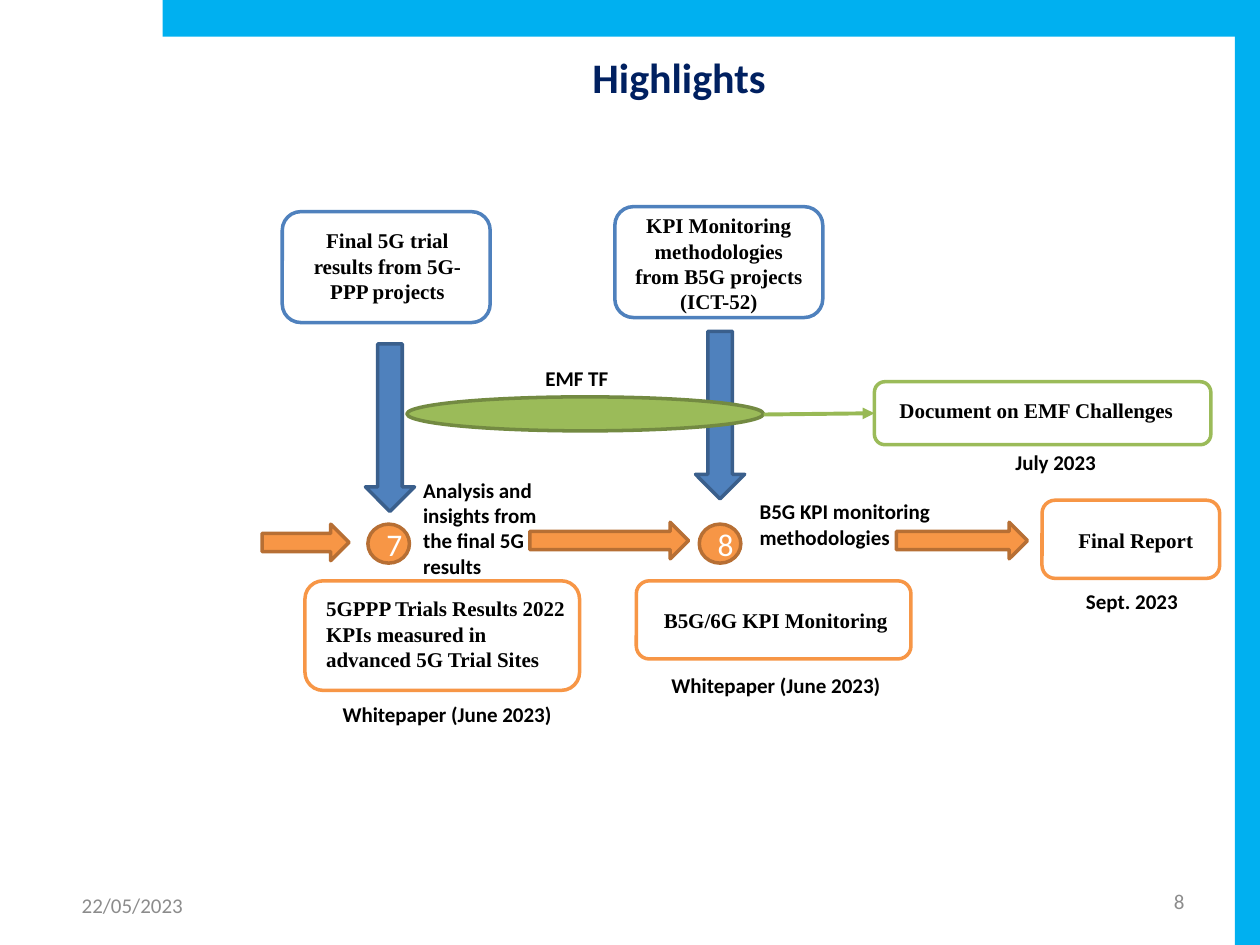
from lxml import etree
from pptx import Presentation
from pptx.dml.color import RGBColor
from pptx.enum.shapes import MSO_CONNECTOR, MSO_SHAPE
from pptx.enum.text import MSO_ANCHOR, PP_ALIGN
from pptx.oxml.ns import qn
from pptx.util import Pt

PX = 9144
RECT, ROUND, OVAL, ARROW = (MSO_SHAPE.RECTANGLE, MSO_SHAPE.ROUNDED_RECTANGLE,
                            MSO_SHAPE.OVAL, MSO_SHAPE.DOWN_ARROW)
LEFT, CENTER, RIGHT = PP_ALIGN.LEFT, PP_ALIGN.CENTER, PP_ALIGN.RIGHT
TOP, MIDDLE = MSO_ANCHOR.TOP, MSO_ANCHOR.MIDDLE
STRAIGHT = MSO_CONNECTOR.STRAIGHT
SANS, SERIF = "Calibri", "Times New Roman"
COLORS = {
    "band": "00B0F0", "title": "002060", "footer": "8C8C8C",
    "black": "000000", "white": "FFFFFF",
    "orange": "F79646", "orange_edge": "B76F34",
    "blue": "4F81BD", "blue_edge": "3A5F8C",
    "green": "9BBB59", "green_edge": "738A42", "link": "98B955",
}


def color(name):
    """Look up a named colour."""
    return RGBColor.from_string(COLORS[name])


def scaled(*lengths):
    """Turn px into EMU."""
    return [length * PX for length in lengths]


def write(frame, text, font=SANS, size=12, ink="black", bold=True, align=LEFT):
    """Write one run into the first paragraph of a frame."""
    paragraph = frame.paragraphs[0]
    paragraph.alignment = align
    run = paragraph.add_run()
    run.text = text
    run.font.name, run.font.size, run.font.bold = font, Pt(size), bold
    run.font.color.rgb = color(ink)


def add_label(slide, bounds, text, wrap=True, anchor=TOP, **style):
    """Add a text box."""
    frame = slide.shapes.add_textbox(*scaled(*bounds)).text_frame
    frame.word_wrap = wrap
    frame.vertical_anchor = anchor
    write(frame, text, **style)


def add_figure(slide, kind, bounds, fill, edge=None):
    """Add a filled preset shape, outlined if an edge colour is given."""
    figure = slide.shapes.add_shape(kind, *scaled(*bounds))
    figure.shadow.inherit = False
    figure.fill.solid()
    figure.fill.fore_color.rgb = color(fill)
    if edge:
        figure.line.color.rgb = color(edge)
        figure.line.width = Pt(2)
    else:
        figure.line.fill.background()
    return figure


def add_card(slide, bounds, edge, text_bounds, text, align=LEFT):
    """Add a rounded outline with its serif caption."""
    add_figure(slide, ROUND, bounds, "white", edge)
    add_label(slide, text_bounds, text, font=SERIF, align=align)


def add_step_arrow(slide, left, top, length):
    """Add an orange arrow pointing right along the timeline."""
    thickness = 29
    bounds = (left + (length - thickness) // 2, top - (length - thickness) // 2,
              thickness, length)
    add_figure(slide, ARROW, bounds, "orange", "orange_edge").rotation = 270


def add_milestone(slide, left, number):
    """Add a numbered circle on the timeline."""
    circle = add_figure(slide, OVAL, (left, 416, 33, 31), "orange", "orange_edge")
    circle.text_frame.vertical_anchor = MIDDLE
    write(circle.text_frame, number, size=18, ink="white", bold=False, align=CENTER)


def add_link(slide, start, end):
    """Add a green line with an arrowhead at its end."""
    link = slide.shapes.add_connector(STRAIGHT, *scaled(*start, *end))
    link.line.color.rgb = color("link")
    link.line.width = Pt(2.25)
    etree.SubElement(link.line._get_or_add_ln(), qn("a:tailEnd"), type="triangle")
    etree.SubElement(link._element.spPr, qn("a:effectLst"))


def add_frame(slide):
    """Add the bands, title, date and page number."""
    add_figure(slide, RECT, (980, 0, 20, 750), "band")
    add_figure(slide, RECT, (129, 0, 851, 29), "band")
    add_label(slide, (224, 36, 630, 94), "Highlights", size=24, ink="title", align=CENTER)
    footer = {"anchor": MIDDLE, "ink": "footer", "bold": False}
    add_label(slide, (55, 698, 233, 40), "22/05/2023", **footer)
    add_label(slide, (717, 695, 233, 40), "8", align=RIGHT, **footer)


def add_timeline(slide):
    """Add the milestones, their papers and the final report."""
    add_card(slide, (242, 461, 218, 87), "orange", (249, 468, 214, 71),
             "5GPPP Trials Results 2022 KPIs measured in advanced 5G Trial Sites")
    add_card(slide, (505, 461, 218, 62), "orange", (517, 477, 214, 30),
             "B5G/6G KPI Monitoring")
    for left, top in ((262, 552), (523, 529)):
        add_label(slide, (left, top, 188, 30), "Whitepaper (June 2023)", wrap=False)
    for left, top, length in ((208, 416, 69), (421, 414, 126), (712, 414, 104)):
        add_step_arrow(slide, left, top, length)
    add_milestone(slide, 292, "7")
    add_milestone(slide, 555, "8")
    add_label(slide, (326, 374, 127, 91), "Analysis and insights from the final 5G results")
    add_label(slide, (593, 391, 156, 71), "B5G KPI monitoring methodologies")
    add_card(slide, (827, 397, 141, 62), "orange", (846, 414, 115, 30), "Final Report")
    add_label(slide, (852, 462, 141, 30), "Sept. 2023")


def add_inputs(slide):
    """Add the project inputs that feed the milestones."""
    add_card(slide, (488, 164, 165, 88), "blue", (491, 164, 159, 91),
             "KPI Monitoring methodologies from B5G projects (ICT-52)", CENTER)
    add_card(slide, (224, 168, 165, 88), "blue", (228, 176, 159, 71),
             "Final 5G trial results from 5G-PPP projects", CENTER)
    for left, top in ((552, 263), (290, 273)):
        add_figure(slide, ARROW, (left, top, 39, 133), "blue", "blue_edge")


def add_task_force(slide):
    """Add the EMF task force and its document."""
    add_figure(slide, OVAL, (323, 315, 283, 27), "green", "green_edge")
    add_label(slide, (423, 285, 217, 30), "EMF TF")
    add_card(slide, (694, 303, 267, 50), "green", (704, 311, 268, 30),
             "Document on EMF Challenges")
    add_link(slide, (606, 329), (694, 328))
    add_label(slide, (796, 352, 85, 30), "July 2023", wrap=False)


def main():
    """Build and save the slide."""
    deck = Presentation()
    deck.slide_width, deck.slide_height = scaled(1000, 750)
    slide = deck.slides.add_slide(deck.slide_layouts[6])
    add_frame(slide)
    add_timeline(slide)
    add_inputs(slide)
    add_task_force(slide)
    deck.save("out.pptx")


if __name__ == "__main__":
    main()
